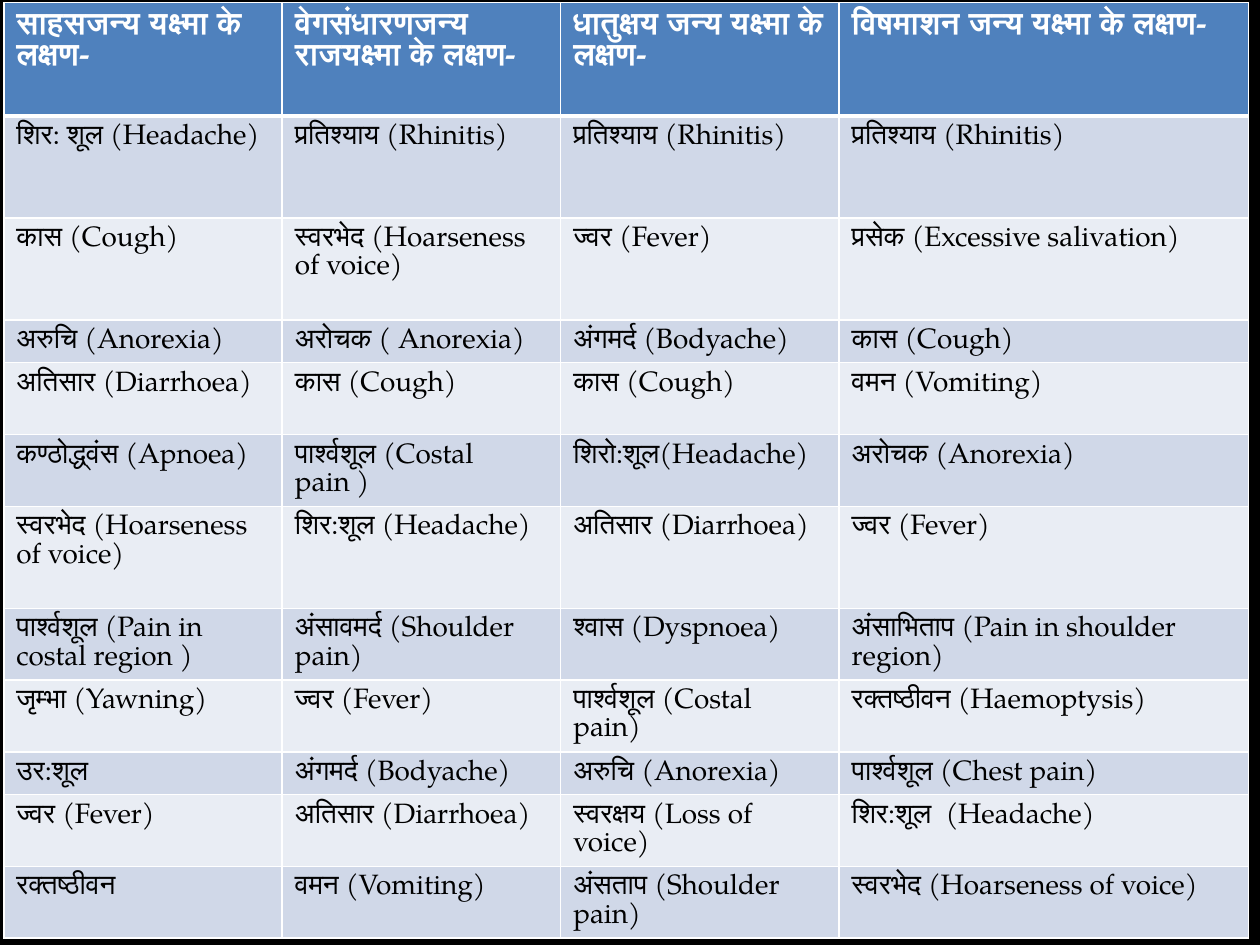
from pptx import Presentation
from pptx.dml.color import RGBColor
from pptx.oxml.ns import qn
from pptx.util import Inches, Pt
from lxml.etree import SubElement

COLORS = {
    "background": "000000",
    "header": "4F81BD",
    "odd_row": "D0D8E8",
    "even_row": "E9EDF4",
    "header_text": "FFFFFF",
    "body_text": "000000",
    "border": "FFFFFF",
}
FONT = "TeX Gyre Pagella"
HEADER_FORMAT = {"name": FONT, "size": Pt(18), "bold": True}
BODY_FORMAT = {"name": FONT, "size": Pt(16), "bold": False}

COLUMN_WIDTHS = [2.21, 2.21, 2.21, 3.25]
ROW_HEIGHTS = [0.9, 0.81, 0.81, 0.33, 0.57, 0.57, 0.81, 0.57, 0.57, 0.33, 0.57, 0.57]
SYMPTOMS = [
    ["साहसजन्य यक्ष्मा के लक्षण-", "वेगसंधारणजन्य राजयक्ष्मा के लक्षण-",
     "धातुक्षय जन्य यक्ष्मा के लक्षण-", "विषमाशन जन्य यक्ष्मा के लक्षण-"],
    ["शिर: शूल (Headache)", "प्रतिश्याय (Rhinitis)",
     "प्रतिश्याय (Rhinitis)", "प्रतिश्याय (Rhinitis)"],
    ["कास (Cough)", "स्वरभेद (Hoarseness of voice)",
     "ज्वर (Fever)", "प्रसेक (Excessive salivation)"],
    ["अरुचि (Anorexia)", "अरोचक ( Anorexia)", "अंगमर्द (Bodyache)", "कास (Cough)"],
    ["अतिसार (Diarrhoea)", "कास (Cough)", "कास (Cough)", "वमन (Vomiting)"],
    ["कण्ठोद्ध्वंस (Apnoea)", "पार्श्वशूल (Costal pain )",
     "शिरो:शूल(Headache)", "अरोचक (Anorexia)"],
    ["स्वरभेद (Hoarseness of voice)", "शिर:शूल (Headache)",
     "अतिसार (Diarrhoea)", "ज्वर (Fever)"],
    ["पार्श्वशूल (Pain in costal region )", "अंसावमर्द (Shoulder pain)",
     "श्वास (Dyspnoea)", "अंसाभिताप (Pain in shoulder region)"],
    ["जृम्भा (Yawning)", "ज्वर (Fever)",
     "पार्श्वशूल (Costal pain)", "रक्तष्ठीवन (Haemoptysis)"],
    ["उर:शूल", "अंगमर्द (Bodyache)", "अरुचि (Anorexia)", "पार्श्वशूल (Chest pain)"],
    ["ज्वर (Fever)", "अतिसार (Diarrhoea)",
     "स्वरक्षय (Loss of voice)", "शिर:शूल  (Headache)"],
    ["रक्तष्ठीवन", "वमन (Vomiting)",
     "अंसताप (Shoulder pain)", "स्वरभेद (Hoarseness of voice)"],
]


def rgb(color_name):
    return RGBColor.from_string(COLORS[color_name])


def add_borders(cell, top, bottom):
    """Draw the four cell borders; top and bottom are widths in points."""
    properties = cell._tc.get_or_add_tcPr()
    for side, width in {"L": 1, "R": 1, "T": top, "B": bottom}.items():
        line = SubElement(properties, qn(f"a:ln{side}"), w=str(Pt(width)))
        fill = SubElement(line, qn("a:solidFill"))
        SubElement(fill, qn("a:srgbClr"), val=COLORS["border"])


def style_cell(cell, row_index):
    is_header = row_index == 0
    add_borders(cell, top=3 if row_index == 1 else 1, bottom=3 if is_header else 1)
    fill_name = "header" if is_header else "odd_row" if row_index % 2 else "even_row"
    cell.fill.solid()
    cell.fill.fore_color.rgb = rgb(fill_name)
    font = cell.text_frame.paragraphs[0].runs[0].font
    for attribute, value in (HEADER_FORMAT if is_header else BODY_FORMAT).items():
        setattr(font, attribute, value)
    font.color.rgb = rgb("header_text" if is_header else "body_text")


def add_symptom_table(slide, left, top, width, height):
    table = slide.shapes.add_table(
        len(ROW_HEIGHTS), len(COLUMN_WIDTHS), left, top, width, height
    ).table
    for column, column_width in zip(table.columns, COLUMN_WIDTHS):
        column.width = Inches(column_width)
    for row_index, (row, texts) in enumerate(zip(table.rows, SYMPTOMS)):
        row.height = Inches(ROW_HEIGHTS[row_index])
        for cell, text in zip(row.cells, texts):
            cell.text = text
            style_cell(cell, row_index)


def main():
    presentation = Presentation()
    presentation.slide_width = Inches(10)
    presentation.slide_height = Inches(7.5)
    slide = presentation.slides.add_slide(presentation.slide_layouts[6])
    slide.background.fill.solid()
    slide.background.fill.fore_color.rgb = rgb("background")
    add_symptom_table(slide, Inches(0.03), Inches(0.02),
                      Inches(sum(COLUMN_WIDTHS)), Inches(sum(ROW_HEIGHTS)))
    presentation.save("out.pptx")


if __name__ == "__main__":
    main()
